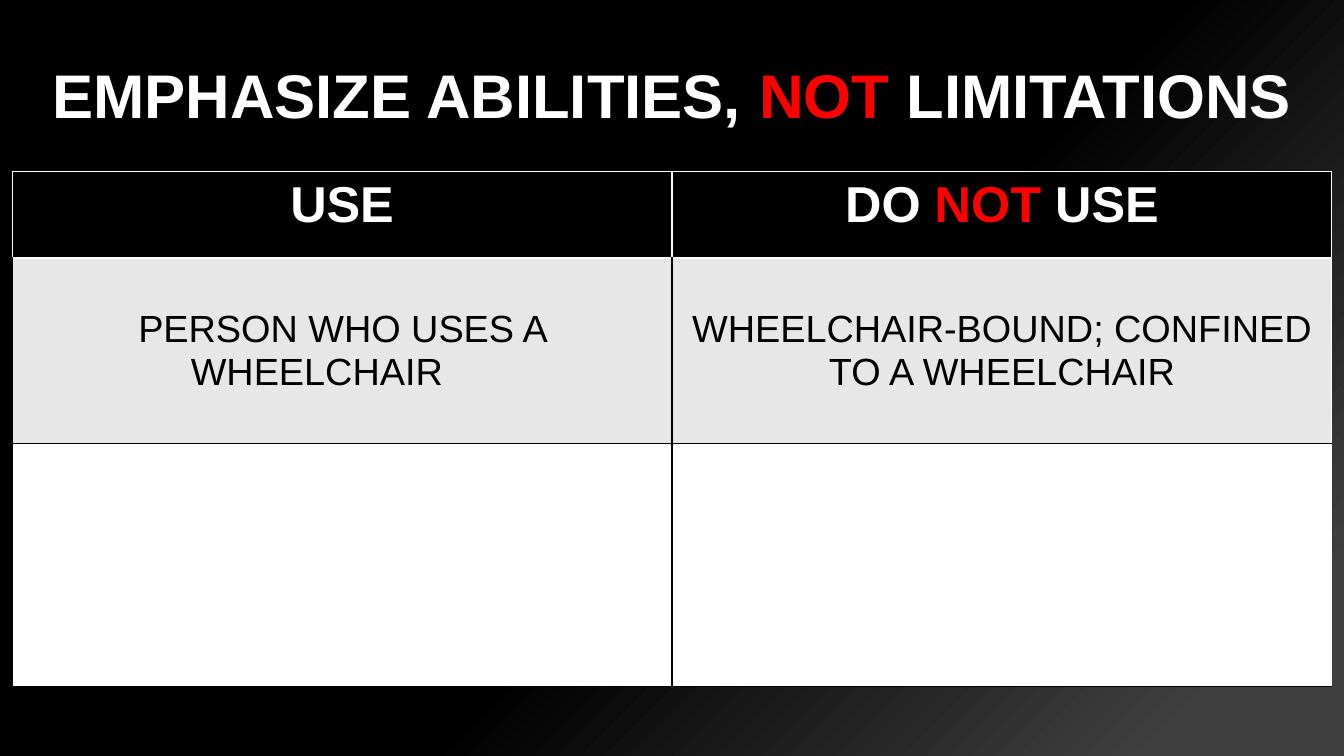
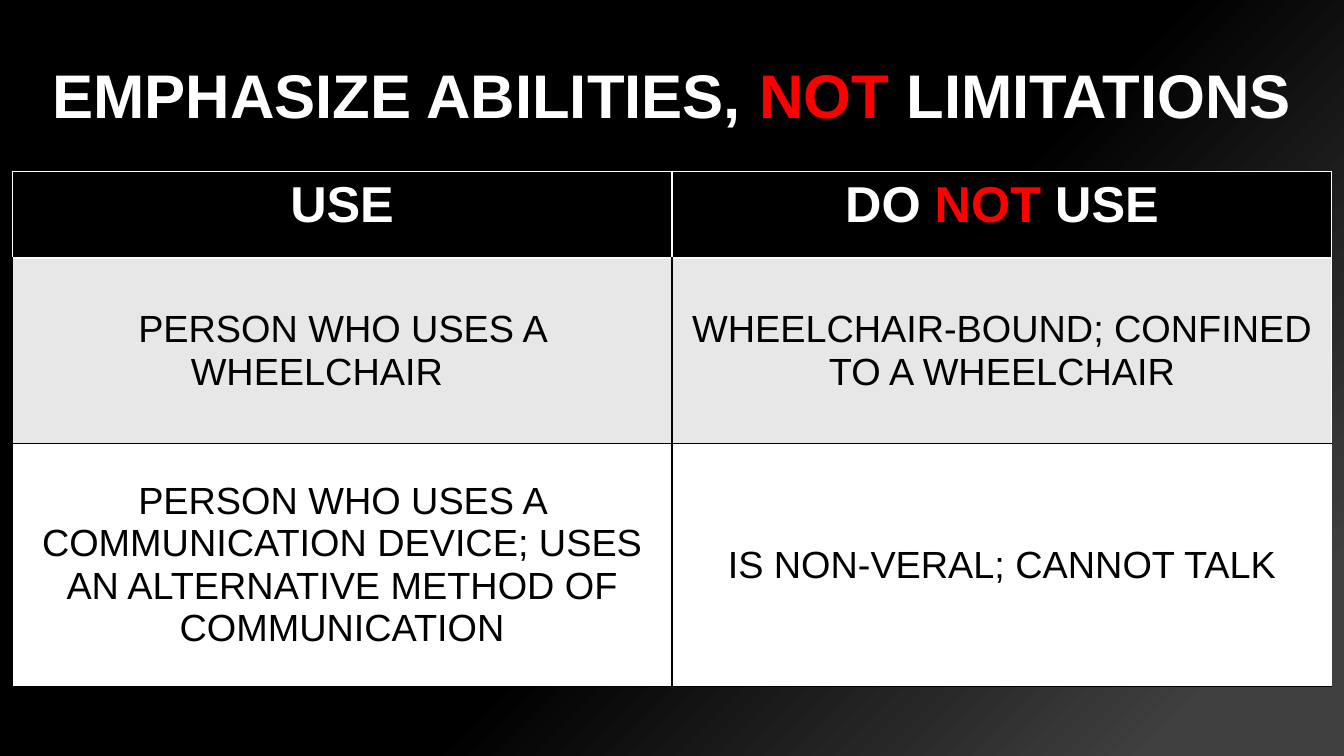
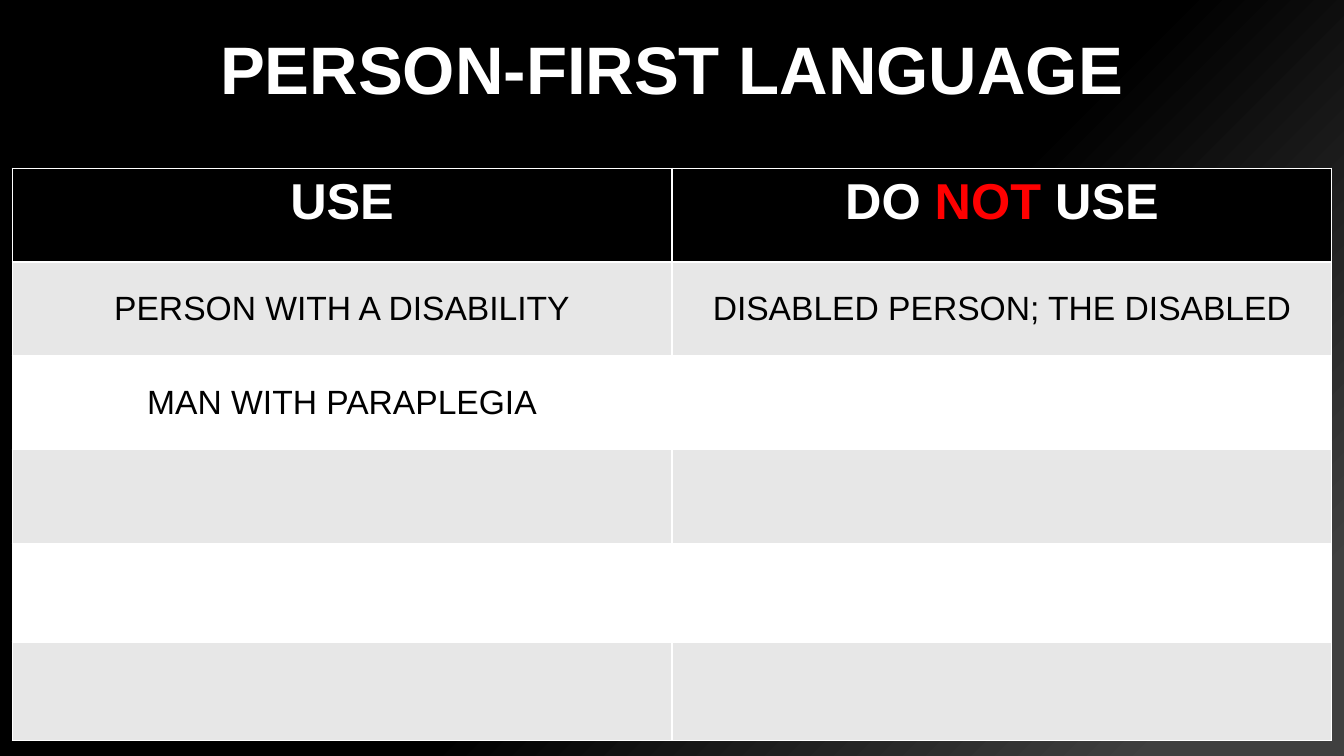
"""Three slides on respectful wording, each a title over a two-column table."""
from lxml.etree import SubElement
from pptx import Presentation
from pptx.dml.color import RGBColor
from pptx.enum.text import MSO_ANCHOR as Anchor, MSO_AUTO_SIZE as Auto, PP_ALIGN as Align
from pptx.oxml.ns import qn
from pptx.util import Inches, Pt

BLACK, WHITE, RED, GREY, DARK = "000000", "FFFFFF", "FF0000", "E7E7E7", "404040"
WIDE, HIGH = 13.33, 7.5
EDGE = 0.12
COL = (WIDE - 2 * EDGE) / 2
hue = RGBColor.from_string


def write(frame, text, size, color=WHITE, bold=True, lead=None):
    """Write centred text, with the parts between asterisks in red."""
    line = frame.paragraphs[0]
    line.alignment = Align.CENTER
    line.line_spacing = lead
    for i, part in enumerate(text.split("*")):
        run = line.add_run()
        run.text = part
        run.font.name = "Arial"
        run.font.size = Pt(size)
        run.font.bold = bold
        run.font.color.rgb = hue(RED if i % 2 else color)


def border(cell, colors):
    """Draw the left, right, top and bottom borders of a cell."""
    props = cell._tc.get_or_add_tcPr()
    for i, (side, color) in enumerate(zip("LRTB", colors)):
        line = SubElement(props, qn("a:ln" + side), w=str(Pt(1)))
        fill = SubElement(line, qn("a:solidFill"))
        SubElement(fill, qn("a:srgbClr"), val=color)
        props.insert(i, line)


HEAD = ("USE", "DO *NOT* USE")
CHAIR = ("PERSON WHO USES A WHEELCHAIR\t", "WHEELCHAIR-BOUND; CONFINED TO A WHEELCHAIR")
TALK = (
    "PERSON WHO USES A COMMUNICATION DEVICE; USES AN ALTERNATIVE METHOD OF COMMUNICATION",
    "IS NON-VERAL; CANNOT TALK",
)
BLANK = ("", "")
FIRST = ("PERSON WITH A DISABILITY", "DISABLED PERSON; THE DISABLED")
MAN = ("MAN WITH PARAPLEGIA", "")

able = dict(
    title="EMPHASIZE ABILITIES, *NOT* LIMITATIONS", big=44, inset=0, top=0.25,
    start=1.7, rows=(0.86, 1.84, 2.41), size=27, rule=BLACK,
)
person = dict(
    title="PERSON-FIRST LANGUAGE", big=48, inset=1, top=0,
    start=1.67, rows=(0.93,) * 4 + (0.98,) * 2, size=24, rule=WHITE,
)
pages = [
    (able, [HEAD, CHAIR, BLANK]),
    (able, [HEAD, CHAIR, TALK]),
    (person, [HEAD, FIRST, MAN, BLANK, BLANK, BLANK]),
]

deck = Presentation()
deck.slide_width, deck.slide_height = Inches(WIDE), Inches(HIGH)
back = deck.slide_master.background.fill
back.gradient()
back.gradient_angle = 315
for stop, place, color in zip(back.gradient_stops, (0.56, 0.91), (BLACK, DARK)):
    stop.position = place
    stop.color.rgb = hue(color)

for look, lines in pages:
    slide = deck.slides.add_slide(deck.slide_layouts[5])
    title = slide.shapes.title
    title.left, title.top = Inches(look["inset"]), Inches(look["top"])
    title.width, title.height = Inches(WIDE - 2 * look["inset"]), Inches(1.45)
    frame = title.text_frame
    frame.auto_size = Auto.NONE
    frame.word_wrap = True
    frame.vertical_anchor = Anchor.MIDDLE
    write(frame, look["title"], look["big"], lead=0.9)

    rows = look["rows"]
    table = slide.shapes.add_table(
        len(rows), 2, Inches(EDGE), Inches(look["start"]),
        Inches(2 * COL), Inches(sum(rows)),
    ).table
    table.horz_banding = False
    for col in table.columns:
        col.width = Inches(COL)
    for r, (high, texts) in enumerate(zip(rows, lines)):
        table.rows[r].height = Inches(high)
        for c, text in enumerate(texts):
            cell = table.cell(r, c)
            cell.fill.solid()
            cell.fill.fore_color.rgb = hue((GREY if r % 2 else WHITE) if r else BLACK)
            cell.vertical_anchor = Anchor.MIDDLE if r else Anchor.TOP
            rule = look["rule"] if r else WHITE
            border(cell, (rule, WHITE if c else rule, rule if r > 1 else WHITE, rule))
            if text and r:
                write(cell.text_frame, text, look["size"], BLACK, False)
            elif text:
                write(cell.text_frame, text, 36)

deck.save("out.pptx")
